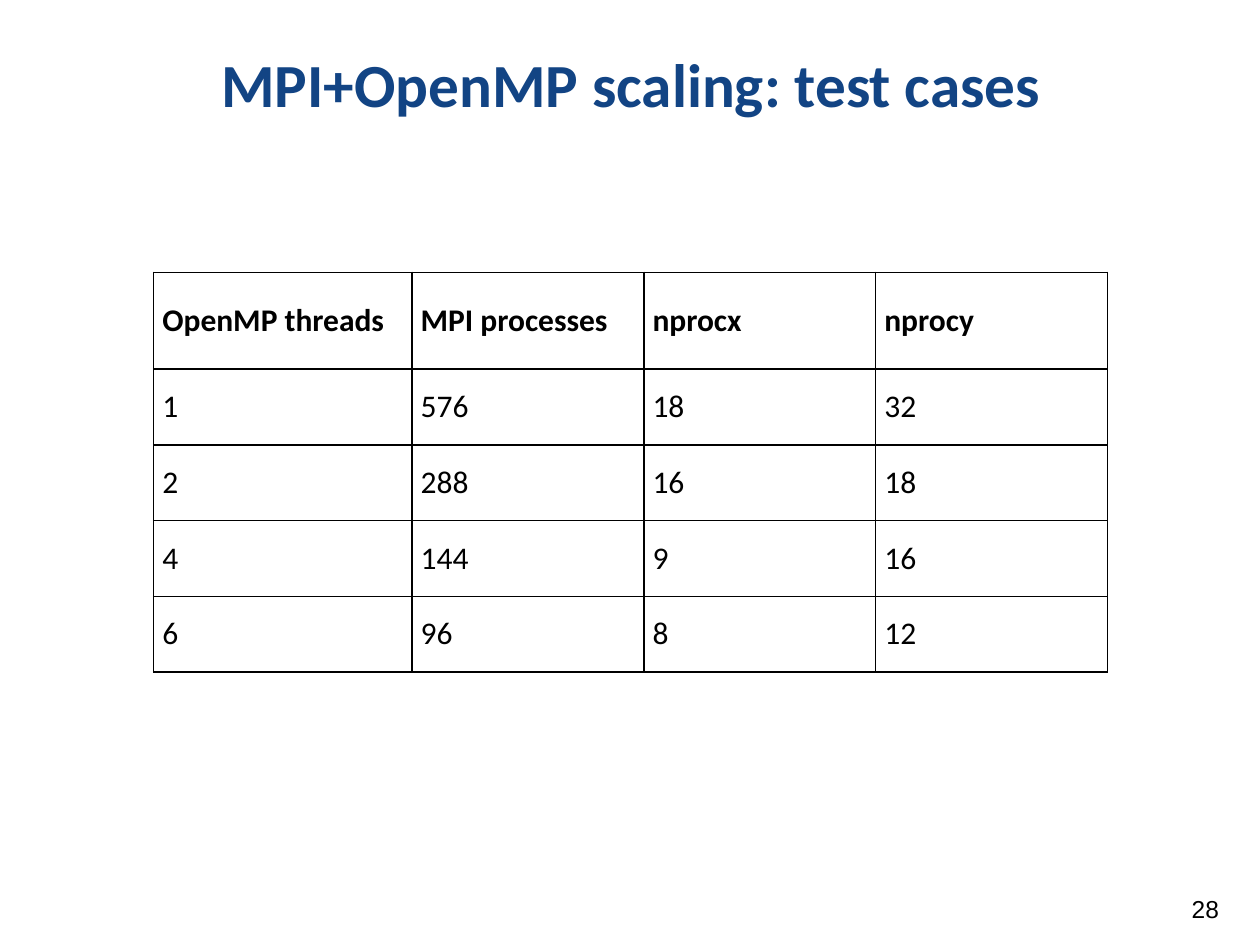
from dataclasses import dataclass

import lxml.etree
import pptx
import pptx.dml.color
import pptx.enum.text
import pptx.oxml.ns
import pptx.util

Pt = pptx.util.Pt
Align = pptx.enum.text.PP_ALIGN
Anchor = pptx.enum.text.MSO_ANCHOR
COLORS = {"title": "124484", "text": "000000", "border": "000000"}


@dataclass
class Box:
    left: float
    top: float
    width: float
    height: float

    def lengths(self) -> list:
        return [Pt(v) for v in (self.left, self.top, self.width, self.height)]


@dataclass
class Row:
    height: float
    cells: tuple
    bold: bool = False


TITLE = Box(36.7, 17.3, 648, 66.2)
NUMBER = Box(673.9, 499, 43.2, 41)
COLS = (147.6, 132.5, 132.5, 132.5)
ROWS = [
    Row(55.2, ("OpenMP threads", "MPI processes", "nprocx", "nprocy"), True),
    *(Row(43.3, cells) for cells in (
        ("1", "576", "18", "32"),
        ("2", "288", "16", "18"),
        ("4", "144", "9", "16"),
        ("6", "96", "8", "12"),
    )),
]
GRID = Box(87.8, 155.7, sum(COLS), sum(row.height for row in ROWS))


def write(frame, text: str, *, size: float, font: str = "Calibri",
          color: str = "text", bold: bool = False, align=Align.LEFT,
          space: float = 1.0) -> None:
    para = frame.paragraphs[0]
    para.alignment = align
    para.line_spacing = space
    run = para.add_run()
    run.text = text
    run.font.size = Pt(size)
    run.font.name = font
    run.font.bold = bold
    run.font.color.rgb = pptx.dml.color.RGBColor.from_string(COLORS[color])


def inset(item, side: float, edge: float) -> None:
    """Set the margins of a text frame or a table cell."""
    item.margin_left = item.margin_right = Pt(side)
    item.margin_top = item.margin_bottom = Pt(edge)
    item.vertical_anchor = Anchor.MIDDLE


def border(cell, width: float) -> None:
    qn = pptx.oxml.ns.qn
    props = cell._tc.get_or_add_tcPr()
    for side in ("lnL", "lnR", "lnT", "lnB"):
        line = lxml.etree.SubElement(props, qn(f"a:{side}"), w=str(Pt(width)))
        fill = lxml.etree.SubElement(line, qn("a:solidFill"))
        lxml.etree.SubElement(fill, qn("a:srgbClr"), val=COLORS["border"])


def add_grid(slide, box: Box, cols: tuple, rows: list) -> None:
    table = slide.shapes.add_table(len(rows), len(cols), *box.lengths()).table
    table.first_row = table.horz_banding = False
    for col, width in zip(table.columns, cols):
        col.width = Pt(width)
    for line, row in zip(table.rows, rows):
        line.height = Pt(row.height)
        for cell, text in zip(line.cells, row.cells):
            inset(cell, 5, 5)
            border(cell, 1)
            cell.fill.background()
            write(cell.text_frame, text, size=18, bold=row.bold)


def main() -> None:
    deck = pptx.Presentation()
    deck.slide_width, deck.slide_height = Pt(720), Pt(540)
    slide = deck.slides.add_slide(deck.slide_layouts.get_by_name("Title Only"))

    title = slide.shapes.title
    title.left, title.top, title.width, title.height = TITLE.lengths()
    inset(title.text_frame, 7.2, 3.6)
    write(title.text_frame, "MPI+OpenMP scaling: test cases", size=35,
          color="title", bold=True, align=Align.CENTER, space=0.9)

    number = slide.shapes.add_textbox(*NUMBER.lengths()).text_frame
    number.word_wrap = True
    inset(number, 7.2, 7.2)
    write(number, "28", size=14, font="Arial")

    add_grid(slide, GRID, COLS, ROWS)
    deck.save("out.pptx")


if __name__ == "__main__":
    main()
